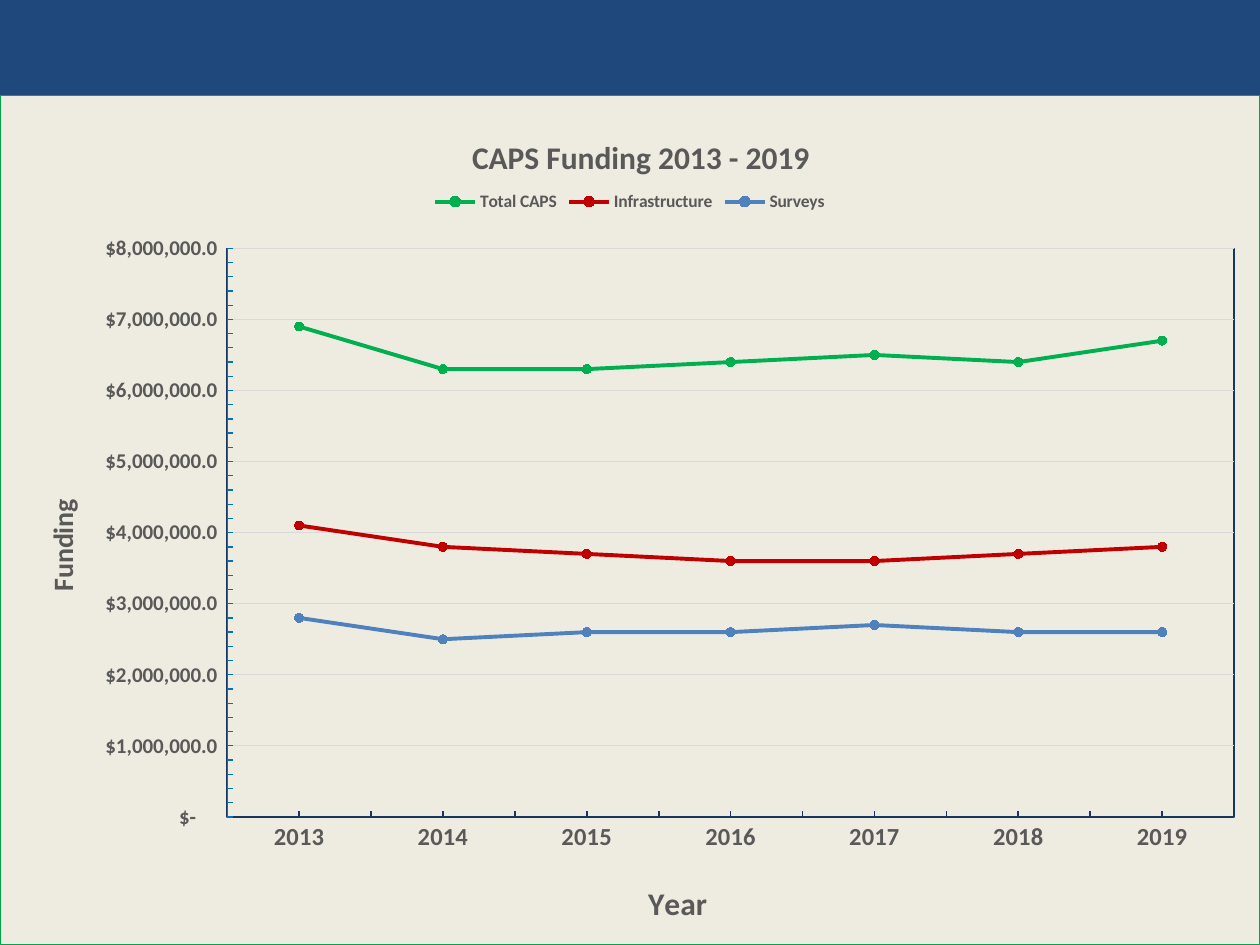
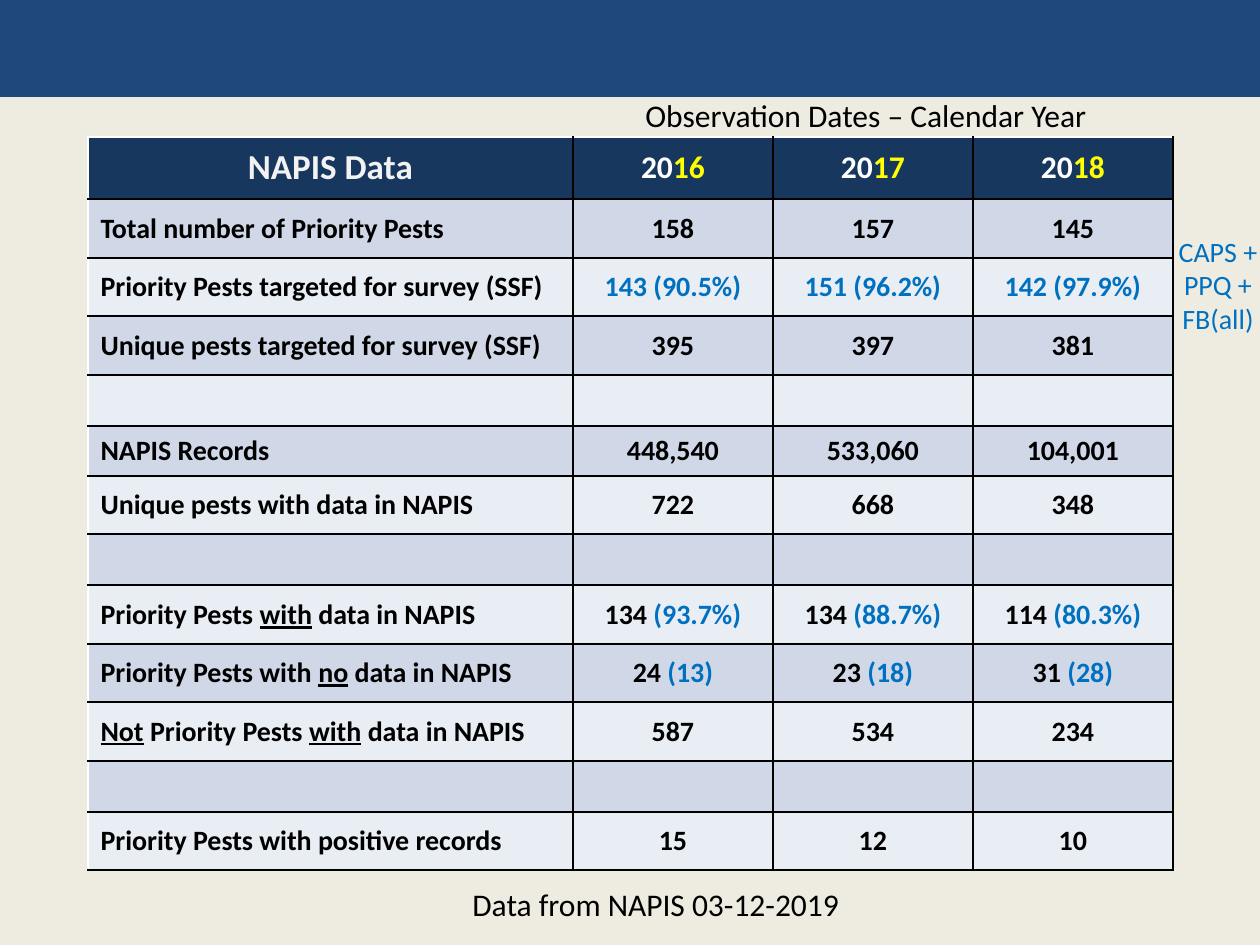
from lxml import etree
from pptx import Presentation, util as u
from pptx.chart.data import CategoryChartData
from pptx.dml.color import RGBColor
from pptx.enum import chart as ch, shapes, text
from pptx.oxml import parse_xml
from pptx.oxml.ns import nsdecls, qn

PX = 914400 / 126
FONT = "Calibri"
C = {
    "paper": "EEECE1", "band": "1F497D", "navy": "17375E", "blue": "0070C0",
    "black": "000000", "white": "FFFFFF", "off_white": "F2F2F2", "yellow": "FFFF00",
    "grey": "595959", "grid": "D9D9D9", "frame": "00A44A",
    "row_dark": "D0D8E8", "row_light": "E9EDF4",
    "total": "00B050", "infra": "C00000", "surveys": "4F81BD",
}

YEARS = ["2013", "2014", "2015", "2016", "2017", "2018", "2019"]
FUNDING = [  # name, line colour, marker edge, millions of dollars
    ("Total CAPS", "total", "total", (6.9, 6.3, 6.3, 6.4, 6.5, 6.4, 6.7)),
    ("Infrastructure", "infra", "infra", (4.1, 3.8, 3.7, 3.6, 3.6, 3.7, 3.8)),
    ("Surveys", "surveys", "blue", (2.8, 2.5, 2.6, 2.6, 2.7, 2.6, 2.6)),
]
DOLLARS = r'_("$"* #,##0.0_);_("$"* \(#,##0.0\);_("$"* "-"??_);_(@_)'

# Asterisks enclose the emphasised part: underlined in labels, coloured elsewhere.
HEADER = ("NAPIS Data", "20*16*", "20*17*", "20*18*")
PESTS = [  # row height, cells
    (59, ("Total number of Priority Pests", "158", "157", "145")),
    (58, ("Priority Pests targeted for survey (SSF)",
          "*143 (90.5%)*", "*151 (96.2%)*", "*142 (97.9%)*")),
    (59, ("Unique pests targeted for survey (SSF)", "395", "397", "381")),
    (51, ("", "", "", "")),
    (50, ("NAPIS Records", "448,540", "533,060", "104,001")),
    (58, ("Unique pests with data in NAPIS", "722", "668", "348")),
    (51, ("", "", "", "")),
    (59, ("Priority Pests *with* data in NAPIS",
          "134 *(93.7%)*", "134 *(88.7%)*", "114 *(80.3%)*")),
    (58, ("Priority Pests with *no* data in NAPIS", "24 *(13)*", "23 *(18)*", "31 *(28)*")),
    (59, ("*Not* Priority Pests *with* data in NAPIS", "587", "534", "234")),
    (51, ("", "", "", "")),
    (58, ("Priority Pests with positive records", "15", "12", "10")),
]
HEADER_H = 62
COL_W = (485, 200, 200, 200)
NOTES = [  # box, lines, size, colour, alignment
    ((460, 879, 396, 51), ["Data from NAPIS 03-12-2019"], 18, "black", "LEFT"),
    ((633, 90, 471, 51), ["Observation Dates – Calendar Year"], 18, "black", "LEFT"),
    ((1166, 228, 104, 115), ["CAPS +", "PPQ +", "FB(all)"], 16, "blue", "CENTER"),
]


def px(*lengths):
    return [u.Emu(round(n * PX)) for n in lengths]


def rgb(name):
    return RGBColor.from_string(C[name])


def set_font(font, size, color, bold=False):
    font.name, font.size, font.bold = FONT, u.Pt(size), bold
    font.color.rgb = rgb(color)


def write(tf, lines, size=16, color="black", bold=False, align="LEFT", accent=None):
    """Fill tf; parts between asterisks take the accent colour, or an underline."""
    for i, line in enumerate(lines):
        p = tf.paragraphs[0] if i == 0 else tf.add_paragraph()
        p.alignment = getattr(text.PP_ALIGN, align)
        for k, part in enumerate(line.split("*")):
            if not part:
                continue
            r = p.add_run()
            r.text = part
            marked = k % 2 == 1
            set_font(r.font, size, accent if marked and accent else color, bold)
            if marked and not accent:
                r.font.underline = True


def new_slide(prs):
    """Blank slide with the shared background and top band."""
    s = prs.slides.add_slide(prs.slide_layouts[6])
    s.background.fill.solid()
    s.background.fill.fore_color.rgb = rgb("paper")
    band = s.shapes.add_shape(shapes.MSO_SHAPE.RECTANGLE, *px(0, 0, 1260, 97))
    band.shadow.inherit = False
    band.fill.solid()
    band.fill.fore_color.rgb = rgb("band")
    band.line.fill.background()
    return s


def area_props(line, width):
    return parse_xml(
        f'<c:spPr {nsdecls("c", "a")}><a:solidFill><a:srgbClr val="{C["paper"]}"/></a:solidFill>'
        f'<a:ln w="{u.Pt(width)}"><a:solidFill><a:srgbClr val="{C[line]}"/></a:solidFill></a:ln>'
        '</c:spPr>')


def place(el, index, x, y, w=None, h=None):
    """Give a chart part a manual layout, in fractions of the chart."""
    for old in el.findall(qn("c:layout")):
        el.remove(old)
    layout = etree.Element(qn("c:layout"))
    manual = etree.SubElement(layout, qn("c:manualLayout"))
    tags = [("xMode", "edge"), ("yMode", "edge"), ("x", x), ("y", y), ("w", w), ("h", h)]
    if el.tag == qn("c:plotArea"):
        tags.insert(0, ("layoutTarget", "inner"))
    for tag, value in tags:
        if value is not None:
            etree.SubElement(manual, qn("c:" + tag)).set("val", str(value))
    el.insert(index, layout)


def style_axis(axis, title, title_size, label_size, line, width):
    write(axis.axis_title.text_frame, [title], title_size, "grey", True)
    set_font(axis.tick_labels.font, label_size, "grey", True)
    axis.major_tick_mark = ch.XL_TICK_MARK.NONE
    axis.minor_tick_mark = ch.XL_TICK_MARK.INSIDE
    axis.format.line.color.rgb = rgb(line)
    axis.format.line.width = u.Pt(width)


def add_funding_chart(s):
    data = CategoryChartData(number_format=DOLLARS)
    data.categories = YEARS
    for name, _, _, millions in FUNDING:
        data.add_series(name, [round(m * 1_000_000) for m in millions])
    chart = s.shapes.add_chart(ch.XL_CHART_TYPE.LINE_MARKERS, *px(0, 95, 1260, 850), data).chart
    set_font(chart.font, 10, "black")
    write(chart.chart_title.text_frame, ["CAPS Funding 2013 - 2019"], 18, "grey", True)
    chart.has_legend = True
    chart.legend.position = ch.XL_LEGEND_POSITION.TOP
    chart.legend.include_in_layout = False
    set_font(chart.legend.font, 10, "grey", True)

    style_axis(chart.category_axis, "Year", 18, 14, "navy", 1)
    values = chart.value_axis
    style_axis(values, "Funding", 16, 12, "blue", 0.75)
    values.minimum_scale, values.maximum_scale = 0, 8_000_000
    values.major_unit, values.minor_unit = 1_000_000, 200_000
    values.tick_labels.number_format = DOLLARS
    values.tick_labels.number_format_is_linked = False
    values.major_gridlines.format.line.color.rgb = rgb("grid")
    values.major_gridlines.format.line.width = u.Pt(0.75)

    for series, (_, color, edge, _) in zip(chart.plots[0].series, FUNDING):
        series.smooth = False
        series.format.line.color.rgb = rgb(color)
        series.format.line.width = u.Pt(2.25)
        marker = series.marker
        marker.style, marker.size = ch.XL_MARKER_STYLE.CIRCLE, 5
        marker.format.fill.solid()
        marker.format.fill.fore_color.rgb = rgb(color)
        marker.format.line.color.rgb = rgb(edge)

    root = chart.element
    plot = root.find(".//" + qn("c:plotArea"))
    plot.append(area_props("navy", 1))
    root.find(qn("c:chart")).addnext(area_props("frame", 0.75))
    corners = etree.Element(qn("c:roundedCorners"))
    corners.set("val", "0")
    root.find(qn("c:date1904")).addnext(corners)

    place(plot, 0, 0.18, 0.18, 0.8, 0.67)
    place(root.find(".//" + qn("c:legend")), 1, 0.34, 0.11, 0.32, 0.03)
    place(chart.chart_title.element, 1, 0.37, 0.04)
    place(chart.category_axis.axis_title.element, 1, 0.51, 0.92)
    side_title = values.axis_title.element
    place(side_title, 1, 0.03, 0.47)
    body = side_title.find(".//" + qn("a:bodyPr"))
    body.set("rot", "-5400000")
    body.set("vert", "horz")


def set_borders(cell, **sides):
    """Draw 1 pt borders; sides must come in the order L, R, T, B."""
    tc_pr = cell._tc.get_or_add_tcPr()
    for i, (side, color) in enumerate(sides.items()):
        tc_pr.insert(i, parse_xml(
            f'<a:ln{side} {nsdecls("a")} w="{u.Pt(1)}"><a:solidFill>'
            f'<a:srgbClr val="{C[color]}"/></a:solidFill></a:ln{side}>'))


def add_pest_table(s):
    rows = [(HEADER_H, HEADER)] + PESTS
    height = sum(h for h, _ in rows)
    table = s.shapes.add_table(len(rows), len(COL_W), *px(88, 137, sum(COL_W), height)).table
    for column, width in zip(table.columns, px(*COL_W)):
        column.width = width
    for i, (row_h, cells) in enumerate(rows):
        table.rows[i].height = px(row_h)[0]
        for j, words in enumerate(cells):
            cell = table.cell(i, j)
            cell.vertical_anchor = text.MSO_ANCHOR.MIDDLE
            cell.fill.solid()
            cell.fill.fore_color.rgb = rgb(
                "navy" if i == 0 else "row_dark" if i % 2 else "row_light")
            if i == 0:
                style = dict(size=18 if j else 20, color="white" if j else "off_white",
                             align="CENTER", accent="yellow")
            elif j:
                style = dict(align="CENTER", accent="blue")
            else:
                style = {}
            write(cell.text_frame, [words], bold=True, **style)
            set_borders(cell, L="black" if j else "white", R="black",
                        T="black" if i else "white", B="black")


def add_note(s, box, lines, size, color, align):
    tf = s.shapes.add_textbox(*px(*box)).text_frame
    tf.word_wrap = False
    tf.auto_size = text.MSO_AUTO_SIZE.SHAPE_TO_FIT_TEXT
    write(tf, lines, size, color, align=align)


def main():
    prs = Presentation()
    prs.slide_width, prs.slide_height = px(1260, 945)
    add_funding_chart(new_slide(prs))
    s = new_slide(prs)
    add_pest_table(s)
    for note in NOTES:
        add_note(s, *note)
    prs.save("out.pptx")


if __name__ == "__main__":
    main()
